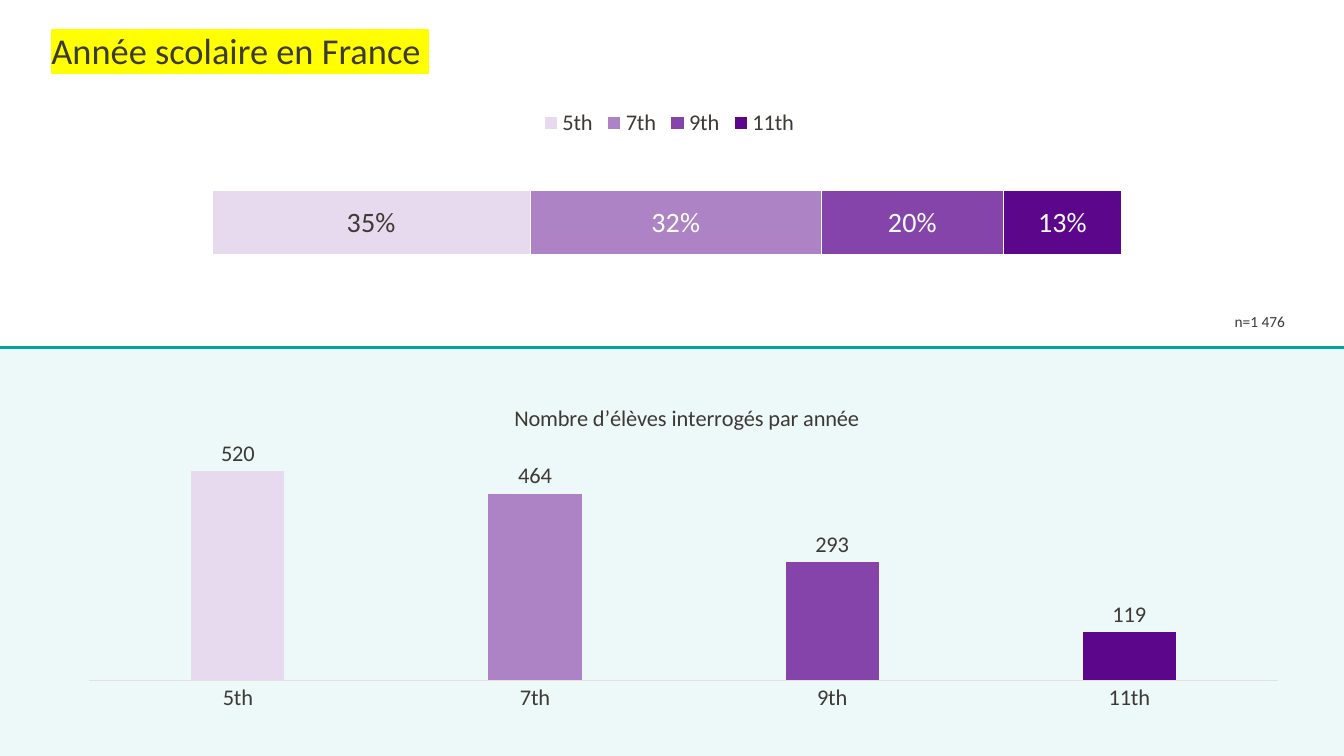
from pptx import Presentation
from pptx.chart.data import CategoryChartData
from pptx.dml.color import RGBColor
from pptx.enum.chart import XL_CHART_TYPE, XL_LABEL_POSITION, XL_LEGEND_POSITION, XL_TICK_MARK
from pptx.enum.shapes import MSO_CONNECTOR, MSO_SHAPE
from pptx.enum.text import MSO_ANCHOR, MSO_AUTO_SIZE, PP_ALIGN
from pptx.oxml import parse_xml
from pptx.oxml.ns import nsdecls, qn
from pptx.util import Inches, Pt

STACKED, COLUMNS = XL_CHART_TYPE.BAR_STACKED, XL_CHART_TYPE.COLUMN_CLUSTERED
CENTER, OUTSIDE = XL_LABEL_POSITION.CENTER, XL_LABEL_POSITION.OUTSIDE_END
NO_TICK = XL_TICK_MARK.NONE

INK = RGBColor(0x3D, 0x39, 0x35)
WHITE = RGBColor(0xFF, 0xFF, 0xFF)
TEAL = RGBColor(0x00, 0xA4, 0x99)
PALE_TEAL = RGBColor(0xED, 0xF9, 0xF8)
AXIS_GREY = RGBColor(0xE3, 0xE1, 0xDF)
FONT = "Calibri"
SLIDE_WIDTH, SLIDE_HEIGHT = 13.33, 7.5
DIVIDER_TOP = 3.45

# School year, share in %, pupils, colour, share label colour
YEARS = [
    ("5th", 35, 520, RGBColor(0xE7, 0xDA, 0xEE), INK),
    ("7th", 32, 464, RGBColor(0xAD, 0x83, 0xC6), WHITE),
    ("9th", 20, 293, RGBColor(0x85, 0x44, 0xA9), WHITE),
    ("11th", 13, 119, RGBColor(0x5C, 0x06, 0x8C), WHITE),
]


def inches(box):
    return [Inches(length) for length in box]


def style_font(font, size, color=INK):
    for name, value in {"name": FONT, "size": Pt(size), "bold": False}.items():
        setattr(font, name, value)
    font.color.rgb = color


def fill_solid(part, color):
    part.fill.solid()
    part.fill.fore_color.rgb = color


def place_chart_part(parent, index, **fractions):
    """Give a chart part a fixed place, in fractions of the chart."""
    old = parent.find(qn("c:layout"))
    if old is not None:
        parent.remove(old)
    target = '<c:layoutTarget val="inner"/>' if "w" in fractions else ""
    modes = '<c:xMode val="edge"/><c:yMode val="edge"/>'
    sizes = "".join(f'<c:{key} val="{value}"/>' for key, value in fractions.items())
    parent.insert(index, parse_xml(
        f'<c:layout {nsdecls("c")}><c:manualLayout>{target}{modes}{sizes}'
        "</c:manualLayout></c:layout>"))


def add_bar_chart(slide, box, kind, data, size, axis_max, gap, overlap, plot_area):
    chart = slide.shapes.add_chart(kind, *inches(box), data).chart
    style_font(chart.font, size)
    value_axis = chart.value_axis
    for name, value in {"visible": False, "has_major_gridlines": False,
                        "minimum_scale": 0, "maximum_scale": axis_max}.items():
        setattr(value_axis, name, value)
    plot = chart.plots[0]
    for name, value in {"gap_width": gap, "overlap": overlap,
                        "vary_by_categories": False}.items():
        setattr(plot, name, value)
    x, y, w, h = plot_area
    place_chart_part(chart.element.find(".//" + qn("c:plotArea")), 0, x=x, y=y, w=w, h=h)
    return chart


def label_series(series, size, color, number_format, position):
    labels = series.data_labels
    for name, value in {"show_value": True, "number_format": number_format,
                        "number_format_is_linked": False, "position": position}.items():
        setattr(labels, name, value)
    style_font(labels.font, size, color)


def add_heading(slide, box):
    title = slide.shapes.title
    title.left, title.top, title.width, title.height = inches(box)
    frame = title.text_frame
    frame.auto_size = MSO_AUTO_SIZE.NONE
    frame.vertical_anchor = MSO_ANCHOR.MIDDLE
    heading = frame.paragraphs[0]
    heading.alignment = PP_ALIGN.LEFT
    heading.line_spacing = 0.9
    run = heading.add_run()
    run.text = "Année scolaire en France "
    style_font(run.font, 26)
    # Yellow marker behind the words
    run.font.fill._xPr.find(qn("a:solidFill")).addnext(parse_xml(
        f'<a:highlight {nsdecls("a")}><a:srgbClr val="FFFF00"/></a:highlight>'))


def add_share_chart(slide, box):
    data = CategoryChartData(number_format="0\\%")
    data.categories = ["1"]
    for year, share, *_ in YEARS:
        data.add_series(year, [share])
    chart = add_bar_chart(slide, box, STACKED, data, 20, 120, 150, 100,
                          (0.14, 0.19, 0.86, 0.67))
    chart.has_title = False
    chart.category_axis.visible = False
    chart.has_legend = True
    chart.legend.position = XL_LEGEND_POSITION.TOP
    chart.legend.include_in_layout = False
    style_font(chart.legend.font, 16)
    for series, (_, _, _, color, label_color) in zip(chart.plots[0].series, YEARS):
        fill_solid(series.format, color)
        series.format.line.color.rgb = WHITE
        series.format.line.width = Pt(0.75)
        label_series(series, 20, label_color, "0\\%", CENTER)


def add_sample_size(slide, box):
    frame = slide.shapes.add_textbox(*inches(box)).text_frame
    frame.word_wrap = True
    frame.auto_size = MSO_AUTO_SIZE.SHAPE_TO_FIT_TEXT
    note = frame.paragraphs[0]
    note.alignment = PP_ALIGN.CENTER
    run = note.add_run()
    run.text = "n=1 476"
    style_font(run.font, 11)


def add_lower_band(slide, box):
    left, top, width, _ = box
    band = slide.shapes.add_shape(MSO_SHAPE.RECTANGLE, *inches(box))
    band.shadow.inherit = False
    fill_solid(band, PALE_TEAL)
    band.line.fill.background()
    # Teal divider along the top edge
    divider = slide.shapes.add_connector(
        MSO_CONNECTOR.STRAIGHT, *inches((left, top, left + width, top)))
    divider.line.color.rgb = TEAL
    divider.line.width = Pt(2.25)
    divider._element.spPr.append(parse_xml(f'<a:effectLst {nsdecls("a")}/>'))


def add_pupil_chart(slide, box):
    data = CategoryChartData(number_format="###0")
    data.categories = [year for year, *_ in YEARS]
    data.add_series("Series 1", [pupils for _, _, pupils, *_ in YEARS])
    chart = add_bar_chart(slide, box, COLUMNS, data, 16, 600, 219, -27,
                          (0.02, 0.18, 0.96, 0.71))
    chart.has_legend = False
    # Chart title
    chart.has_title = True
    caption = chart.chart_title.text_frame.paragraphs[0].add_run()
    caption.text = "Nombre d’élèves interrogés par année"
    style_font(caption.font, 16)
    chart.chart_title.include_in_layout = False
    place_chart_part(chart.chart_title._element, 1, x=0.36, y=0.06)
    # Category axis
    year_axis = chart.category_axis
    year_axis.major_tick_mark = year_axis.minor_tick_mark = NO_TICK
    year_axis.format.line.color.rgb = AXIS_GREY
    year_axis.format.line.width = Pt(0.75)
    style_font(year_axis.tick_labels.font, 16)
    # Columns, one colour per year
    pupils_series = chart.plots[0].series[0]
    label_series(pupils_series, 16, INK, "###0", OUTSIDE)
    for index, (_, _, _, color, _) in enumerate(YEARS):
        fill_solid(pupils_series.points[index].format, color)


def main():
    deck = Presentation()
    deck.slide_width, deck.slide_height = inches((SLIDE_WIDTH, SLIDE_HEIGHT))
    slide = deck.slides.add_slide(deck.slide_layouts[5])
    add_heading(slide, (0.41, 0.06, 11.5, 0.92))
    add_share_chart(slide, (0.34, 0.97, 12.59, 2.36))
    add_sample_size(slide, (11.99, 3.05, 1.01, 0.29))
    add_lower_band(slide, (0, DIVIDER_TOP, SLIDE_WIDTH, SLIDE_HEIGHT - DIVIDER_TOP))
    add_pupil_chart(slide, (0.64, 3.75, 12.28, 3.37))
    deck.save("out.pptx")


if __name__ == "__main__":
    main()
